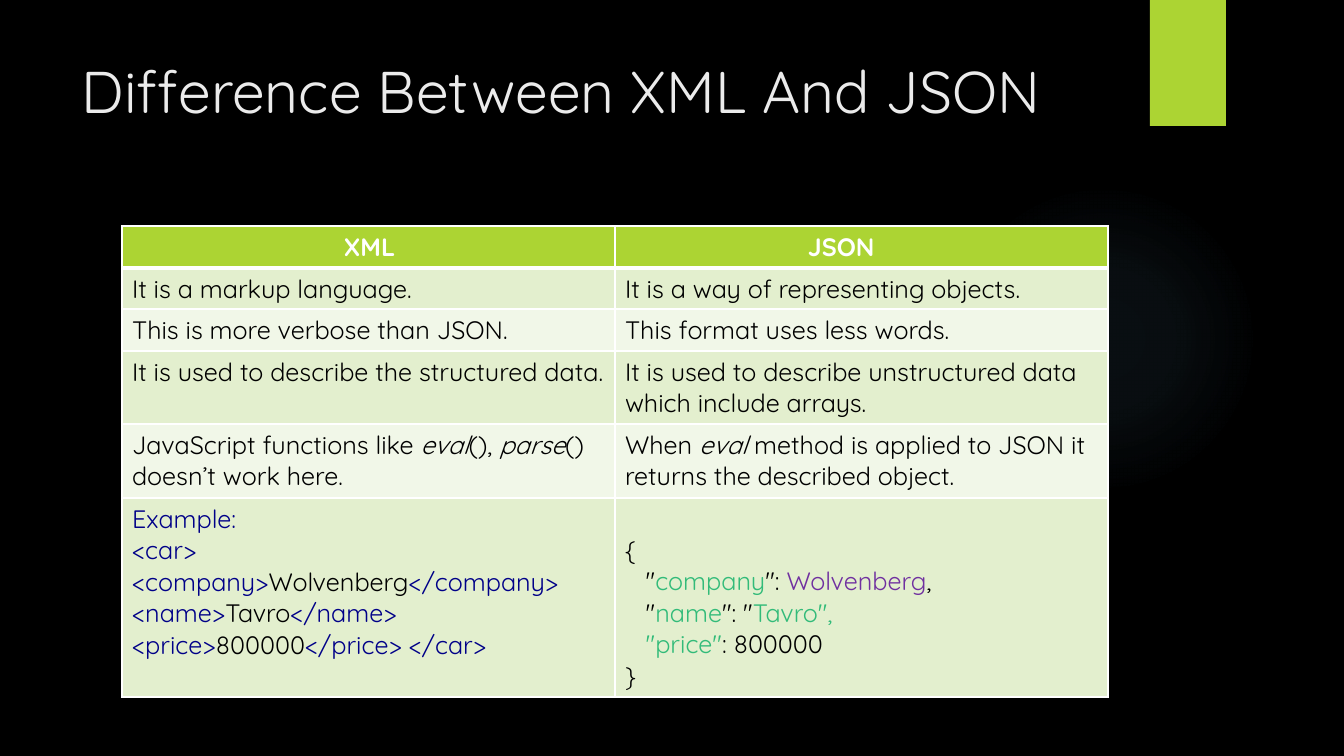
import lxml.etree
import pptx
import pptx.dml.color
import pptx.enum.shapes
import pptx.enum.text
import pptx.oxml
import pptx.oxml.ns
import pptx.util

RGBColor = pptx.dml.color.RGBColor
Shape = pptx.enum.shapes.MSO_SHAPE
Anchor = pptx.enum.text.MSO_ANCHOR

EMU_PER_PX = 914400 / 100.8
FONT = "Quicksand"
BLACK = RGBColor(0x00, 0x00, 0x00)
WHITE = RGBColor(0xFF, 0xFF, 0xFF)
TITLE = RGBColor(0xEB, 0xEB, 0xEB)
LIME = RGBColor(0xAC, 0xD4, 0x33)
BAND_DARK = RGBColor(0xE3, 0xEF, 0xCE)
BAND_LIGHT = RGBColor(0xF1, 0xF7, 0xE8)
GLOW = RGBColor(0x7A, 0xC4, 0xF0)
NAVY = RGBColor(0x00, 0x00, 0x88)
GREEN = RGBColor(0x32, 0xBB, 0x79)
PURPLE = RGBColor(0x70, 0x30, 0xA0)

ITALIC = "italic"

HEADERS = [("XML", 222), ("JSON", 193)]
ROW_HEIGHTS = [42, 41, 42, 73, 74, 199]
ROWS = [
    ([["It is a markup language."]],
     [["It is a way of representing objects."]]),
    ([["This is more verbose than JSON."]],
     [["This format uses less words."]]),
    ([["It is used to describe the structured data."]],
     [["It is used to describe unstructured data which include arrays."]]),
    ([["JavaScript functions like ", ("eval", ITALIC), "(), ", ("parse", ITALIC), "()"],
      ["doesn’t work here."]],
     [["When ", ("eval ", ITALIC),
       "method is applied to JSON it returns the described object."]]),
    ([[("Example:", NAVY)],
      [("<car> <company>", NAVY), "Wolvenberg", ("</company> <name>", NAVY), "Tavro",
       ("</name> <price>", NAVY), "800000", ("</price> </car>", NAVY)]],
     [["{"],
      ['   "', ("company", GREEN), '": ', ("Wolvenberg", PURPLE), ","],
      ['   "', ("name", GREEN), '": "', ('Tavro",', GREEN)],
      [('   "price"', GREEN), ": 800000"],
      ["}"]]),
]


def px(length):
    return pptx.util.Emu(round(length * EMU_PER_PX))


class SlideBuilder:
    def __init__(self, presentation):
        self.slide = presentation.slides.add_slide(presentation.slide_layouts[6])
        self.slide.background.fill.solid()
        self.slide.background.fill.fore_color.rgb = BLACK

    def shape(self, kind, left, top, width, height, color):
        shape = self.slide.shapes.add_shape(kind, px(left), px(top), px(width), px(height))
        shape.shadow.inherit = False
        shape.fill.solid()
        shape.fill.fore_color.rgb = color
        shape.line.fill.background()
        return shape

    def glow(self, left, top, size, color, stops):
        shape = self.shape(Shape.OVAL, left, top, size, size, color)
        stop_xml = "".join(
            f'<a:gs pos="{position * 1000}"><a:srgbClr val="{color}">'
            f'<a:alpha val="{alpha * 1000}"/></a:srgbClr></a:gs>'
            for position, alpha in stops)
        gradient = pptx.oxml.parse_xml(
            f'<a:gradFill {pptx.oxml.ns.nsdecls("a")}><a:gsLst>{stop_xml}</a:gsLst>'
            '<a:path path="circle"><a:fillToRect l="50000" t="50000" r="50000" b="50000"/>'
            '</a:path></a:gradFill>')
        properties = shape.element.spPr
        properties.replace(properties.find(pptx.oxml.ns.qn("a:solidFill")), gradient)

    def style(self, paragraph, size, color, bold=False):
        paragraph.font.name = FONT
        paragraph.font.size = pptx.util.Pt(size)
        paragraph.font.bold = bold
        paragraph.font.color.rgb = color

    def title(self, text, left, top, width, height):
        frame = self.slide.shapes.add_textbox(px(left), px(top), px(width), px(height)).text_frame
        frame.word_wrap = True
        frame.text = text
        self.style(frame.paragraphs[0], 42, TITLE)

    def table(self, left, top, width, headers, rows, heights):
        table = self.slide.shapes.add_table(
            len(heights), len(headers), px(left), px(top), px(width), px(sum(heights))).table
        table.first_row = table.horz_banding = False
        for row, height in zip(table.rows, heights):
            row.height = px(height)
        for column, (header, indent) in enumerate(headers):
            cell = table.cell(0, column)
            cell.margin_left = px(indent)
            self.cell(cell, [[header]], LIME, WHITE, bold=True, bottom=3)
        for index, contents in enumerate(rows, 1):
            band = BAND_DARK if index % 2 else BAND_LIGHT
            for column, paragraphs in enumerate(contents):
                self.cell(table.cell(index, column), paragraphs, band, BLACK,
                          top=3 if index == 1 else 1)
        return table

    def cell(self, cell, paragraphs, fill, color, bold=False, top=1, bottom=1):
        cell.fill.solid()
        cell.fill.fore_color.rgb = fill
        self.borders(cell, {"L": 1, "R": 1, "T": top, "B": bottom})
        frame = cell.text_frame
        for index, pieces in enumerate(paragraphs):
            paragraph = frame.add_paragraph() if index else frame.paragraphs[0]
            self.style(paragraph, 18, color, bold)
            for piece in pieces:
                text, accent = (piece, None) if isinstance(piece, str) else piece
                run = paragraph.add_run()
                run.text = text
                if accent == ITALIC:
                    run.font.italic = True
                elif accent is not None:
                    run.font.color.rgb = accent

    def borders(self, cell, widths):
        properties = cell._tc.get_or_add_tcPr()
        for index, (side, points) in enumerate(widths.items()):
            properties.insert(index, pptx.oxml.parse_xml(
                f'<a:ln{side} {pptx.oxml.ns.nsdecls("a")} w="{pptx.util.Pt(points)}">'
                f'<a:solidFill><a:srgbClr val="{WHITE}"/></a:solidFill></a:ln{side}>'))


def main():
    presentation = pptx.Presentation()
    presentation.slide_width = px(1344)
    presentation.slide_height = px(756)
    builder = SlideBuilder(presentation)
    builder.glow(948, 184, 310, GLOW, [(0, 7), (36, 6), (69, 0)])
    builder.shape(Shape.RECTANGLE, 1150, 0, 76, 126, LIME)
    builder.title("Difference Between XML And JSON", 72, 50, 1037, 154)
    table = builder.table(122, 226, 986, HEADERS, ROWS, ROW_HEIGHTS)
    table.cell(len(ROWS), 1).vertical_anchor = Anchor.BOTTOM
    presentation.save("out.pptx")


if __name__ == "__main__":
    main()
